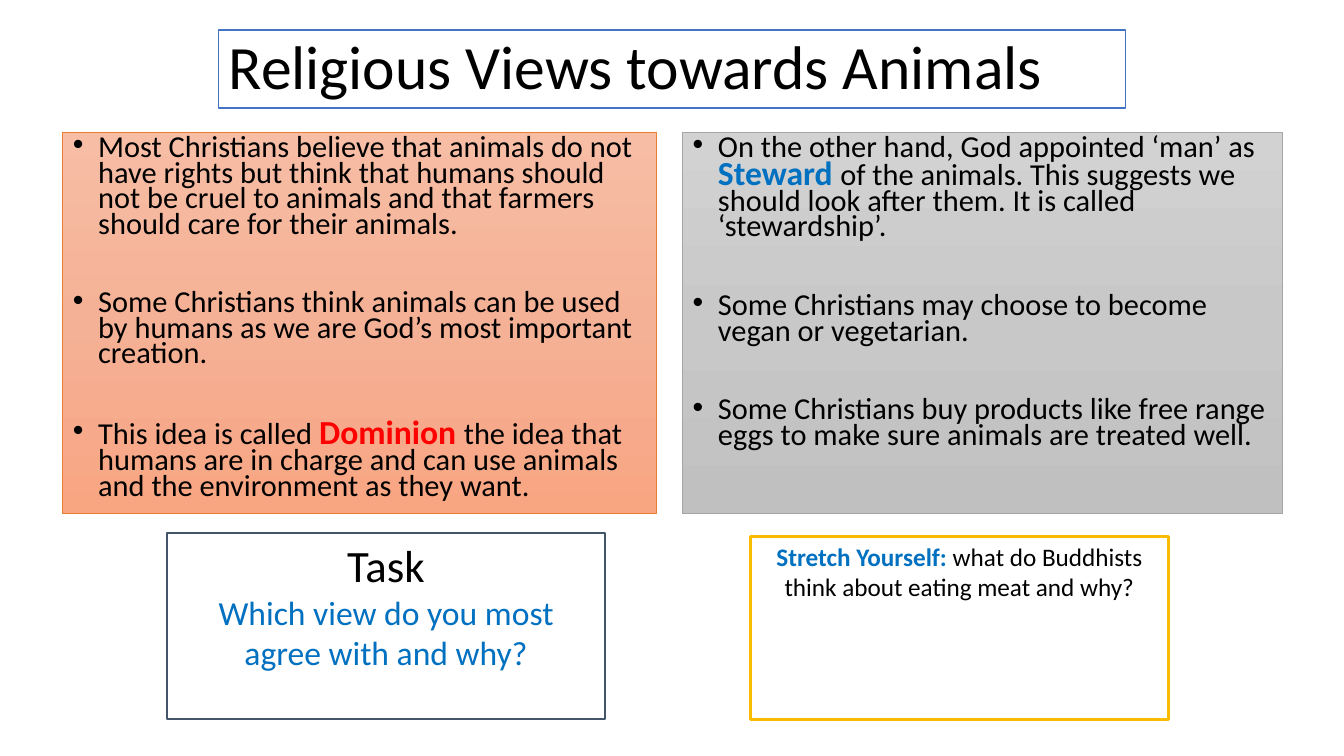
from copy import deepcopy

from pptx import Presentation
from pptx.dml.color import RGBColor
from pptx.enum.text import MSO_ANCHOR, MSO_AUTO_SIZE, PP_ALIGN
from pptx.util import Cm, Pt

LEFT, CENTER = PP_ALIGN.LEFT, PP_ALIGN.CENTER
TOP, MIDDLE = MSO_ANCHOR.TOP, MSO_ANCHOR.MIDDLE
NO_AUTOFIT = MSO_AUTO_SIZE.NONE
FONT = "Calibri"
TWO_CONTENT_LAYOUT = 3
BODY_SIZE, KEYWORD_SIZE = 21.7, 24

COLORS = {
    "text": "000000", "white": "FFFFFF", "blue": "0070C0", "red": "FF0000",
    "title_line": "4472C4", "dominion_line": "ED7D31", "stewardship_line": "A5A5A5",
    "task_line": "44546A", "stretch_line": "F9BC00",
}
GRADIENTS = {
    "dominion": ("F7BDA5", "F5B196", "F8A582"),
    "stewardship": ("D2D2D2", "C8C8C8", "C0C0C0"),
}

DOMINION_POINTS = [
    ["Most Christians believe that animals do not have rights but think that humans "
     "should not be cruel to animals and that farmers should care for their animals."],
    ["Some Christians think animals can be used by humans as we are God’s most "
     "important creation."],
    ["This idea is called", ("Dominion", "red"),
     "the idea that humans are in charge and can use animals and the environment "
     "as they want."],
]
STEWARDSHIP_POINTS = [
    ["On the other hand, God appointed ‘man’ as", ("Steward", "blue"),
     "of the animals. This suggests we should look after them. It is called "
     "‘stewardship’."],
    ["Some Christians may choose to become vegan or vegetarian."],
    ["Some Christians buy products like free range eggs to make sure animals are "
     "treated well."],
]


def rgb(name):
    return RGBColor.from_string(COLORS[name])


def add_run(paragraph, text, size, color="text", bold=False):
    run = paragraph.add_run()
    run.text = text
    run.font.name = FONT
    run.font.size = Pt(size)
    run.font.bold = bold
    run.font.color.rgb = rgb(color)


def frame_box(shape, box, line, width, anchor=TOP):
    """Place the shape, outline it and return its text frame."""
    shape.left, shape.top, shape.width, shape.height = (Cm(length) for length in box)
    shape.line.color.rgb = rgb(line)
    shape.line.width = Pt(width)
    frame = shape.text_frame
    frame.word_wrap = True
    frame.auto_size = NO_AUTOFIT
    frame.vertical_anchor = anchor
    return frame


def fill_gradient(shape, stops):
    """Fill from top to bottom with evenly spaced colour stops."""
    shape.fill.gradient()
    shape.fill.gradient_angle = 270
    stop_list = shape.element.spPr.xpath("./a:gradFill/a:gsLst")[0]
    while len(stop_list) < len(stops):
        stop_list.append(deepcopy(stop_list[0]))
    for index, (stop, color) in enumerate(zip(shape.fill.gradient_stops, stops)):
        stop.color.rgb = RGBColor.from_string(color)
        stop.position = index / (len(stops) - 1)


def build_title(title, box):
    frame = frame_box(title, box, "title_line", 1, MIDDLE)
    title.fill.solid()
    title.fill.fore_color.rgb = rgb("white")
    heading = frame.paragraphs[0]
    heading.alignment = LEFT
    heading.line_spacing = 0.9
    add_run(heading, "Religious Views towards Animals", 44)


def build_view(body, box, points, gradient, line):
    """Fill a panel with bullets; (word, colour) pairs are keywords."""
    frame = frame_box(body, box, line, 0.5)
    fill_gradient(body, GRADIENTS[gradient])
    for index, point in enumerate(points):
        bullet = frame.add_paragraph() if index else frame.paragraphs[0]
        bullet.line_spacing = 0.7
        bullet.space_before = Pt(38 if index else 10)
        properties = bullet._p.get_or_add_pPr()
        properties.set("marL", str(Cm(0.64)))
        properties.set("indent", str(-Cm(0.64)))
        for part in point:
            if isinstance(part, tuple):
                keyword, color = part
                add_run(bullet, " ", BODY_SIZE)
                add_run(bullet, keyword + " ", KEYWORD_SIZE, color=color, bold=True)
            else:
                add_run(bullet, part, BODY_SIZE)


def build_prompt(slide, box, paragraphs, line, width):
    """Add an outlined box of centred paragraphs, each a list of run formats."""
    prompt = slide.shapes.add_textbox(0, 0, 0, 0)
    frame = frame_box(prompt, box, line, width)
    for index, runs in enumerate(paragraphs):
        paragraph = frame.add_paragraph() if index else frame.paragraphs[0]
        paragraph.alignment = CENTER
        for run in runs:
            add_run(paragraph, **run)


def main():
    presentation = Presentation()
    presentation.slide_width, presentation.slide_height = Cm(33.87), Cm(19.05)
    slide = presentation.slides.add_slide(
        presentation.slide_layouts[TWO_CONTENT_LAYOUT])
    title, dominion, stewardship = slide.placeholders

    build_title(title, (5.51, 0.76, 22.86, 1.96))
    build_view(dominion, (1.58, 3.33, 14.96, 9.6), DOMINION_POINTS,
               "dominion", "dominion_line")
    build_view(stewardship, (17.2, 3.33, 15.11, 9.6), STEWARDSHIP_POINTS,
               "stewardship", "stewardship_line")
    build_prompt(slide, (18.92, 13.51, 10.52, 4.62), [[
        {"text": "Stretch Yourself: ", "size": 18, "color": "blue", "bold": True},
        {"text": "what do Buddhists think about eating meat and why?", "size": 18},
    ]], "stretch_line", 2)
    build_prompt(slide, (4.22, 13.43, 11.02, 4.7), [
        [{"text": "Task", "size": 32}],
        [{"text": "Which view do you most agree with and why?", "size": 24,
          "color": "blue"}],
    ], "task_line", 1.5)
    presentation.save("out.pptx")


if __name__ == "__main__":
    main()
